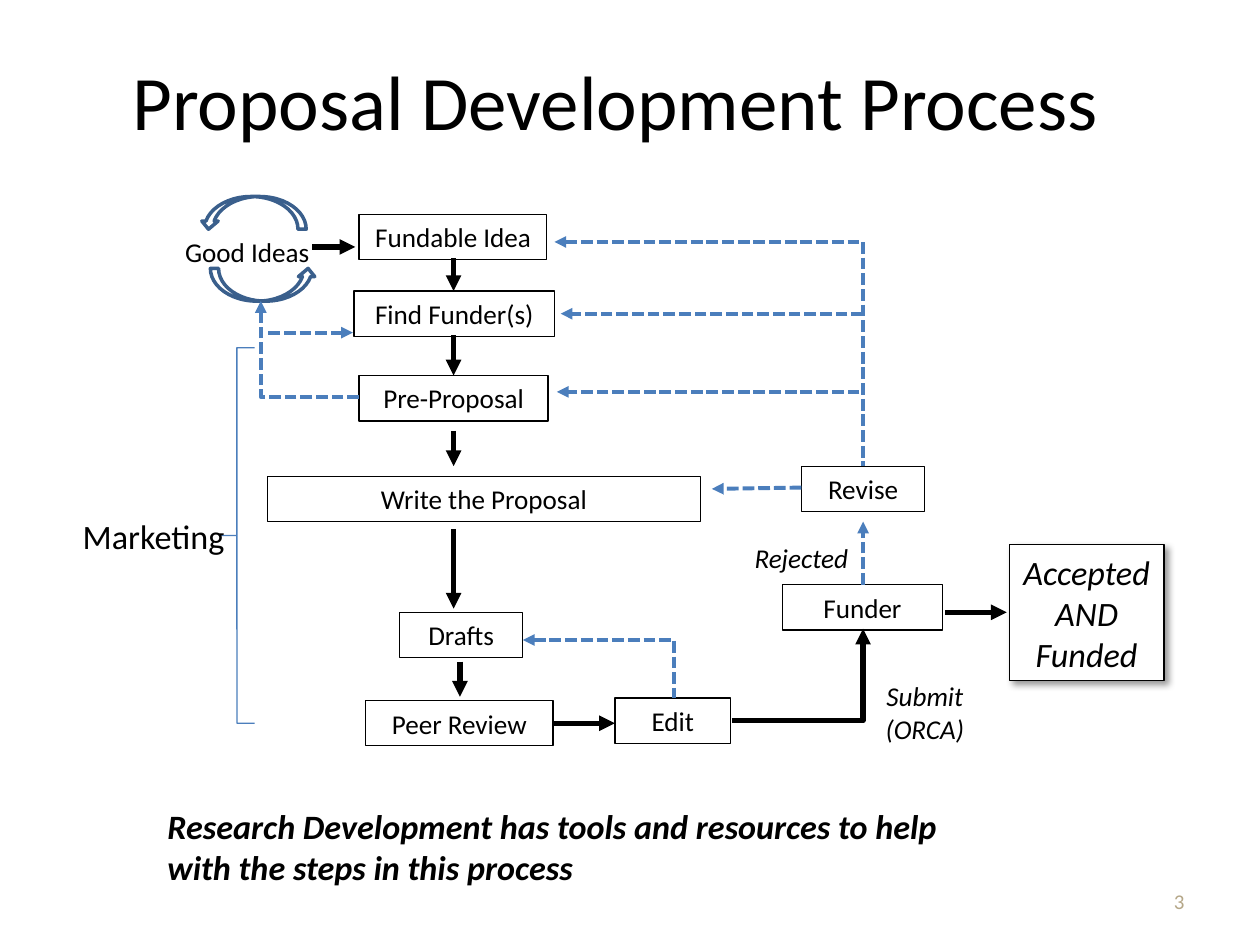
from lxml.etree import SubElement
from pptx import Presentation
from pptx.dml.color import RGBColor
from pptx.enum.dml import MSO_LINE
from pptx.enum.shapes import MSO_CONNECTOR, MSO_SHAPE
from pptx.enum.text import MSO_ANCHOR, PP_ALIGN
from pptx.oxml.ns import qn
from pptx.util import Inches, Pt

BLACK = RGBColor(0x00, 0x00, 0x00)
WHITE = RGBColor(0xFF, 0xFF, 0xFF)
BLUE = RGBColor(0x4B, 0x7E, 0xBC)
NAVY = RGBColor(0x3A, 0x5F, 0x8C)
TAN = RGBColor(0xB5, 0xA7, 0x88)
FONT = "Calibri"
BODY, LARGE = 15.5, 19.5
ROW_H = 0.36
MAIN_X, RETURN_X = 3.6, 6.85

TITLE = "Proposal Development Process"
STEPS = [
    ("Fundable Idea", 2.85, 1.7, 1.49, 0.75),
    ("Find Funder(s)", 2.81, 2.31, 1.59, 0.75),
    ("Pre-Proposal", 2.85, 2.98, 1.5, 1),
    ("Write the Proposal", 2.12, 3.78, 3.44, 0.5),
    ("Drafts", 3.17, 4.86, 0.98, 0.75),
    ("Peer Review", 2.9, 5.56, 1.49, 0.75),
    ("Edit", 4.88, 5.54, 0.92, 0.75),
    ("Funder", 6.21, 4.64, 1.27, 0.75),
    ("Revise", 6.36, 3.7, 0.98, 0.75),
]
CENTER, LEFT, RIGHT = PP_ALIGN.CENTER, PP_ALIGN.LEFT, PP_ALIGN.RIGHT
LABELS = [
    ("Good Ideas", (1.37, 1.82, 1.28, ROW_H), BODY, LEFT, BLACK, False, False),
    ("Submit (ORCA)", (6.89, 5.34, 0.9, 0.62), BODY, CENTER, BLACK, False, True),
    ("Rejected", (5.55, 4.25, 1.62, ROW_H), BODY, CENTER, BLACK, False, True),
    ("Marketing", (0.55, 4.04, 1.34, 0.43), LARGE, CENTER, BLACK, False, False),
    ("Research Development has tools and resources to help with the steps in this process",
     (1.23, 6.34, 6.83, 0.76), LARGE, LEFT, BLACK, True, True),
    ("3", (7.17, 6.95, 2.33, 0.4), 12, RIGHT, TAN, False, False),
]
FORWARD = [
    (2.48, 1.96, 2.82, 1.96),
    (MAIN_X, 2.05, MAIN_X, 2.31),
    (MAIN_X, 2.66, MAIN_X, 2.98),
    (MAIN_X, 3.42, MAIN_X, 3.7),
    (MAIN_X, 4.2, MAIN_X, 4.83),
    (3.65, 5.25, 3.65, 5.53),
    (4.4, 5.74, 4.88, 5.74),
    (7.5, 4.86, 7.99, 4.86),
]
FEEDBACK = [
    (2.13, 2.64, 2.8, 2.64),
    (RETURN_X, 4.64, RETURN_X, 4.14),
    (RETURN_X, 2.49, 4.45, 2.49),
    (6.82, 3.11, 4.42, 3.11),
    (6.36, 3.87, 5.65, 3.88),
]
BENDS = [
    ((2.85, 3.15, 2.07, 2.39), True, "tailEnd"),
    ((4.15, 5.08, 5.35, 5.54), True, "headEnd"),
    ((5.81, 5.72, RETURN_X, 4.99), False, "tailEnd"),
    ((4.4, 1.92, RETURN_X, 3.7), True, "headEnd"),
]
CYCLE = [((1.88, 1.27, 0.26, 0.84), 90), ((1.96, 1.84, 0.26, 0.84), 270)]


def write(shape, text, size, align=CENTER, color=BLACK, bold=False, italic=False):
    tf = shape.text_frame
    tf.word_wrap = True
    tf.vertical_anchor = MSO_ANCHOR.MIDDLE
    p = tf.paragraphs[0]
    p.alignment = align
    r = p.add_run()
    r.text = text
    f = r.font
    f.name, f.size, f.bold, f.italic = FONT, Pt(size), bold, italic
    f.color.rgb = color


def add_outline(s, kind, box, color, width, filled=True):
    sp = s.shapes.add_shape(kind, *map(Inches, box))
    sp.shadow.inherit = False
    if filled:
        sp.fill.solid()
        sp.fill.fore_color.rgb = WHITE
    else:
        sp.fill.background()
    sp.line.color.rgb = color
    sp.line.width = Pt(width)
    return sp


def add_arrow(s, ends, dashed, bent=False, arrow_end="tailEnd"):
    kind = MSO_CONNECTOR.ELBOW if bent else MSO_CONNECTOR.STRAIGHT
    c = s.shapes.add_connector(kind, *map(Inches, ends))
    c.line.color.rgb = BLUE if dashed else BLACK
    c.line.width = Pt(2.25 if dashed else 3)
    if dashed:
        c.line.dash_style = MSO_LINE.SQUARE_DOT
    spPr = c._element.spPr
    if bent:
        spPr.find(qn("a:prstGeom")).set("prst", "bentConnector2")
    SubElement(spPr.find(qn("a:ln")), qn("a:" + arrow_end), type="triangle")
    SubElement(spPr, qn("a:effectLst"))


def add_shadow(sp):
    effects = sp._element.spPr.find(qn("a:effectLst"))
    shadow = SubElement(effects, qn("a:outerShdw"), blurRad=str(Pt(4)), dist=str(Pt(3)),
                        dir="2700000", algn="tl", rotWithShape="0")
    color = SubElement(shadow, qn("a:srgbClr"), val=str(BLACK))
    SubElement(color, qn("a:alpha"), val="40000")


def main():
    prs = Presentation()
    prs.slide_width, prs.slide_height = Inches(10), Inches(7.5)
    s = prs.slides.add_slide(prs.slide_layouts[5])
    title = s.shapes.title
    title.left, title.top, title.width, title.height = map(Inches, (0.7, 0.35, 8.37, 0.89))
    write(title, TITLE, 44)

    for text, x, y, w, width in STEPS:
        sp = add_outline(s, MSO_SHAPE.RECTANGLE, (x, y, w, ROW_H), BLACK, width)
        write(sp, text, BODY)
    accepted = add_outline(s, MSO_SHAPE.RECTANGLE, (8.01, 4.32, 1.23, 1.08), BLACK, 0.75)
    write(accepted, "Accepted AND Funded", LARGE, italic=True)
    add_shadow(accepted)

    for box, angle in CYCLE:
        sp = add_outline(s, MSO_SHAPE.CURVED_RIGHT_ARROW, box, NAVY, 2, False)
        sp.rotation = angle
    brace = add_outline(s, MSO_SHAPE.LEFT_BRACE, (1.74, 2.76, 0.28, 2.98), BLUE, 0.75, False)
    brace.adjustments[0] = 0

    for text, box, *style in LABELS:
        write(s.shapes.add_textbox(*map(Inches, box)), text, *style)

    for ends in FORWARD:
        add_arrow(s, ends, False)
    for ends in FEEDBACK:
        add_arrow(s, ends, True)
    for ends, dashed, arrow_end in BENDS:
        add_arrow(s, ends, dashed, True, arrow_end)

    prs.save("out.pptx")


if __name__ == "__main__":
    main()
